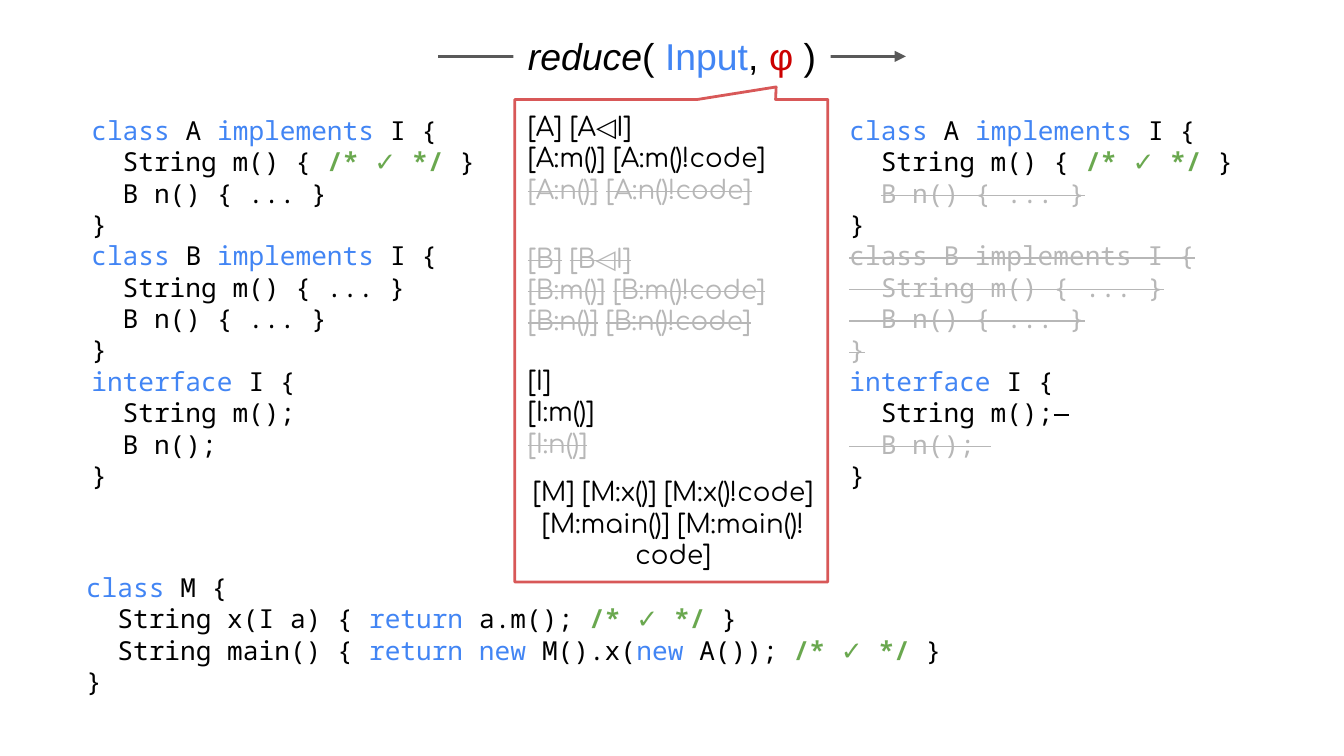
"""Build a slide showing how reduce() trims a program to the items kept by a formula."""
from dataclasses import dataclass

from lxml import etree
from pptx import Presentation
from pptx import util as u
from pptx.dml.color import RGBColor
from pptx.enum import shapes, text
from pptx.oxml.ns import qn


@dataclass(frozen=True)
class Theme:
    black: str = "000000"
    blue: str = "4285F4"
    green: str = "6AA84F"
    grey: str = "B7B7B7"
    red: str = "CC0000"
    frame: str = "D85858"
    arrow: str = "595959"
    white: str = "FFFFFF"
    title_font: str = "Arial"
    code_font: str = "Noto Sans Mono"
    item_font: str = "Comfortaa"
    title_size: float = 20
    body_size: float = 14
    line_pitch: float = 16.8
    line_width: float = 1.5


theme = Theme()
styles = {
    "plain": (theme.black, ""),
    "italic": (theme.black, "i"),
    "keyword": (theme.blue, ""),
    "comment": (theme.green, "b"),
    "check": (theme.green, ""),
    "formula": (theme.red, ""),
    "faint": (theme.grey, ""),
    "gone": (theme.grey, "s"),
    "struck": (theme.black, "s"),
}


def add_runs(paragraph, runs, font_name, size):
    for words, style in runs:
        if words == "\n":
            paragraph.add_line_break()
            continue
        color, marks = styles[style]
        run = paragraph.add_run()
        run.text = words
        run.font.name = font_name
        run.font.size = u.Pt(size)
        run.font.bold = "b" in marks
        run.font.italic = "i" in marks
        run.font.color.rgb = RGBColor.from_string(color)
        if "s" in marks:
            run.font._element.set("strike", "sngStrike")


def add_text(slide, box, inset, font_name, alignment, lines):
    frame = slide.shapes.add_textbox(*map(u.Inches, box)).text_frame
    frame.word_wrap = True
    frame.margin_left = frame.margin_right = u.Inches(inset)
    frame.margin_top = frame.margin_bottom = u.Inches(inset)
    for index, runs in enumerate(lines):
        paragraph = frame.add_paragraph() if index else frame.paragraphs[0]
        paragraph.alignment = alignment
        paragraph.line_spacing = u.Pt(theme.line_pitch)
        add_runs(paragraph, runs, font_name, theme.body_size)


presentation = Presentation()
presentation.slide_width = u.Inches(10)
presentation.slide_height = u.Inches(10 * 9 / 16)
slide = presentation.slides.add_slide(presentation.slide_layouts[5])

title = slide.shapes.title
title.left, title.top, title.width, title.height = map(u.Inches, (3.82, 0.12, 2.36, 0.59))
title.fill.solid()
title.fill.fore_color.rgb = RGBColor.from_string(theme.white)
frame = title.text_frame
frame.auto_size = text.MSO_AUTO_SIZE.NONE
frame.word_wrap = True
frame.vertical_anchor = text.MSO_ANCHOR.MIDDLE
frame.margin_left = frame.margin_right = frame.margin_top = frame.margin_bottom = u.Inches(0.1)
frame.paragraphs[0].alignment = text.PP_ALIGN.CENTER
title_runs = [("reduce", "italic"), ("( ", "plain"), ("Input", "keyword"),
              (", ", "plain"), ("φ ", "formula"), (")", "plain")]
add_runs(frame.paragraphs[0], title_runs, theme.title_font, theme.title_size)

arrow = slide.shapes.add_connector(
    shapes.MSO_CONNECTOR.STRAIGHT, *map(u.Inches, (3.26, 0.42, 6.74, 0.42)))
arrow.line.color.rgb = RGBColor.from_string(theme.arrow)
arrow.line.width = u.Pt(theme.line_width)
etree.SubElement(arrow.element.spPr.find(qn("a:ln")), qn("a:tailEnd"), type="triangle")
etree.SubElement(arrow.element.spPr, qn("a:effectLst"))
title.element.addprevious(arrow.element)

callout = slide.shapes.add_shape(
    shapes.MSO_SHAPE.RECTANGULAR_CALLOUT, *map(u.Inches, (3.83, 0.74, 2.33, 3.59)))
callout.adjustments[0] = 0.335
callout.adjustments[1] = -0.526
callout.shadow.inherit = False
callout.fill.background()
callout.line.color.rgb = RGBColor.from_string(theme.frame)
callout.line.width = u.Pt(theme.line_width)

tick = [("/* ", "comment"), ("✓ ", "check"), ("*/ ", "comment"), ("}", "plain")]
class_a, class_b = (
    [("class", "keyword"), (f" {name} ", "plain"), ("implements", "keyword"), (" I {", "plain")]
    for name in "AB")
interface = [("interface", "keyword"), (" I { ", "plain")]
ticked_m = [("  String m() { ", "plain"), *tick]
body_m, body_n = "  String m() { ... }", "  B n() { ... }"
close = [("}", "plain")]

input_code = [
    class_a, ticked_m, [(body_n, "plain")], close,
    class_b, [(body_m, "plain")], [(body_n, "plain")], close,
    interface, [("  String m(); ", "plain")], [("  B n(); ", "plain")], close,
]
reduced_code = [
    class_a, ticked_m, [("  ", "faint"), (body_n.strip(), "gone")], close,
    [("class B implements I {", "gone")], [(body_m, "gone")], [(body_n, "gone")], [("}", "gone")],
    interface, [("  String m();", "plain"), (" ", "struck")], [("  B n(); ", "gone")], close,
]
main_code = [
    [("class", "keyword"), (" M { ", "plain")],
    [("  String x(I a) { ", "plain"), ("return", "keyword"), (" a.m(); ", "plain"),
     *tick, (" ", "plain")],
    [("  String main() { ", "plain"), ("return new", "keyword"), (" M().x(", "plain"),
     ("new", "keyword"), (" A()); ", "plain"), *tick],
    close,
]
removed_n, removed_b, removed_bm, removed_bn = (
    [(first, "gone"), (" ", "faint"), (second, "gone")]
    for first, second in [("[A:n()]", "[A:n()!code]"), ("[B]", "[B◁I]"),
                          ("[B:m()]", "[B:m()!code]"), ("[B:n()]", "[B:n()!code]")])
line_break = ("\n", "plain")
items_a = [[("[A] [A◁I] ", "plain"), line_break,
            ("[A:m()] [A:m()!code]", "plain"), line_break, *removed_n]]
items_b = [removed_b, removed_bm, removed_bn]
items_i = [[("[I]", "plain")], [("[I:m()]", "plain")], [("[I:n()]", "gone")]]
items_m = [[("[M] [M:x()] [M:x()!code] [M:main()] [M:main()!code]", "plain")]]

code_style = (0.15, theme.code_font, text.PP_ALIGN.JUSTIFY)
item_style = (0.1, theme.item_font, text.PP_ALIGN.LEFT)
main_style = (0.1, theme.item_font, text.PP_ALIGN.CENTER)
for box, style, lines in [
    ((0.53, 0.7, 3.3, 3.13), code_style, input_code),
    ((3.83, 0.72, 2.74, 0.91), item_style, items_a),
    ((3.83, 1.7, 2.74, 0.91), item_style, items_b),
    ((3.83, 2.61, 2.74, 0.91), item_style, items_i),
    ((6.17, 0.7, 3.45, 3.13), code_style, reduced_code),
    ((0.49, 4.1, 9.01, 1.25), code_style, main_code),
    ((3.83, 3.44, 2.36, 0.91), main_style, items_m),
]:
    add_text(slide, box, *style, lines)

presentation.save("out.pptx")
